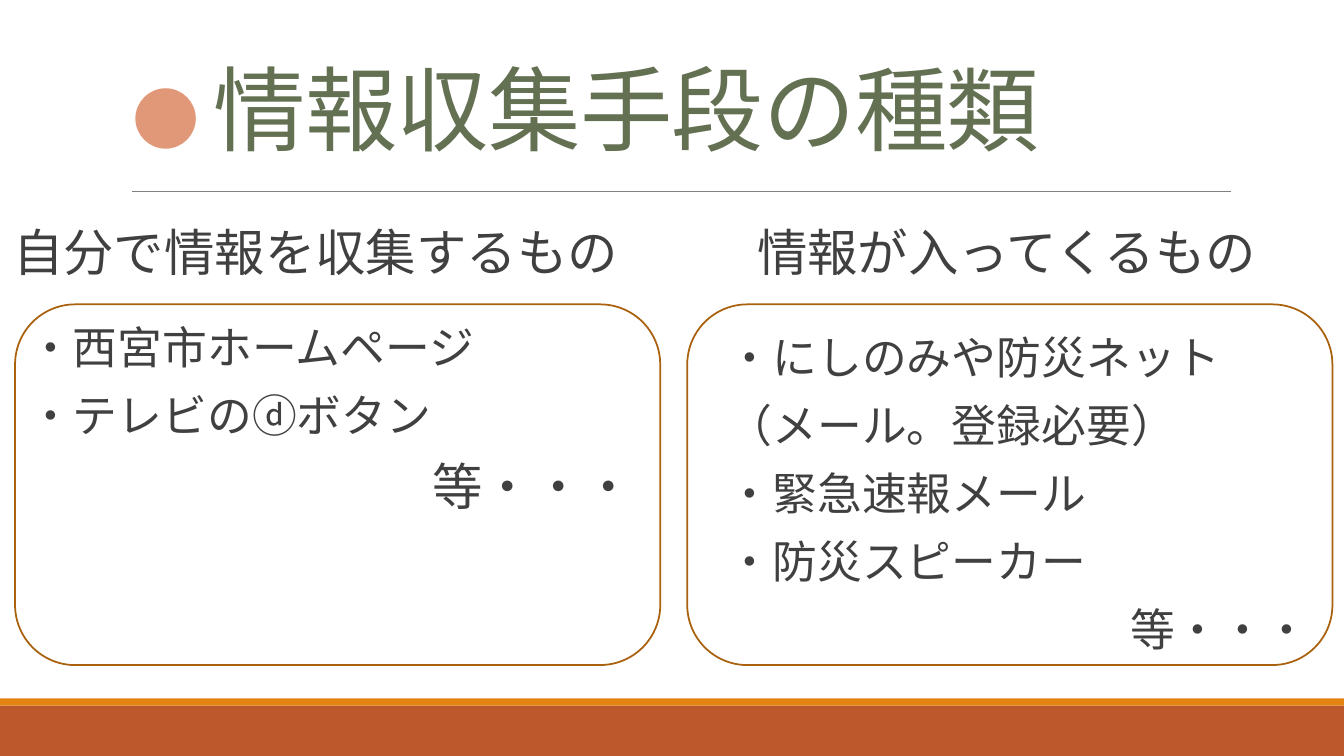
from lxml import etree
from pptx import Presentation
from pptx import util as u
from pptx.dml.color import RGBColor
from pptx.enum import shapes, text
from pptx.oxml.ns import qn

GOTHIC = "Noto Sans CJK JP"
LEFT, RIGHT = text.PP_ALIGN.LEFT, text.PP_ALIGN.RIGHT


def color(value):
    return RGBColor.from_string(value)


def add_text(page, place, lines, paragraph_format, anchor=text.MSO_ANCHOR.TOP):
    box = page.shapes.add_textbox(*map(u.Cm, place))
    frame = box.text_frame
    frame_format = {"word_wrap": True, "vertical_anchor": anchor,
                    "margin_left": u.Cm(0.33), "margin_right": 0}
    for name, value in frame_format.items():
        setattr(frame, name, value)
    for index, (alignment, spans) in enumerate(lines):
        para = frame.paragraphs[0] if index == 0 else frame.add_paragraph()
        for name, value in {**paragraph_format, "alignment": alignment}.items():
            setattr(para, name, value)
        for words, size, font, fill in spans:
            span = para.add_run()
            span.text = words
            for name, value in {"size": u.Pt(size), "name": font}.items():
                setattr(span.font, name, value)
            span.font.color.rgb = color(fill)
            east_asian = etree.SubElement(span.font._element, qn("a:ea"))
            east_asian.set("typeface", GOTHIC)
    return box


deck = Presentation()
deck.slide_width, deck.slide_height = u.Cm(33.87), u.Cm(19.05)
page = deck.slides.add_slide(deck.slide_layouts[6])

for top, height, fill in [(17.78, 1.27, "BD582C"), (17.6, 0.18, "E48312")]:
    band = page.shapes.add_shape(shapes.MSO_SHAPE.RECTANGLE, 0, u.Cm(top),
                                 deck.slide_width, u.Cm(height))
    band.shadow.inherit = False
    band.fill.solid()
    band.fill.fore_color.rgb = color(fill)
    band.line.fill.background()

rule = page.shapes.add_connector(shapes.MSO_CONNECTOR.STRAIGHT,
                                 u.Cm(3.33), u.Cm(4.83), u.Cm(31.01), u.Cm(4.83))
rule.line.color.rgb = color("808080")
rule.line.width = u.Pt(0.5)
etree.SubElement(rule._element.spPr, qn("a:effectLst"))

title = add_text(page, (3, 1.04, 27.94, 3.2),
                 [(LEFT, [("● ", 48, "Calibri", "E09878"),
                          ("情報収集手段の種類", 66, GOTHIC, "637052")])],
                 {"line_spacing": 0.85}, text.MSO_ANCHOR.BOTTOM)
for span in title.text_frame.paragraphs[0].runs:
    span.font._element.set("spc", "-50")

columns = [
    (0.38, (0, 5.61, 17.93, 2.06), "自分で情報を収集するもの", (0.38, 8.08, 15.6, 6.53),
     [("・西宮市ホームページ", 32, LEFT), ("・テレビのⓓボタン", 32, LEFT),
      ("等・・・", 36, RIGHT)]),
    (17.32, (18.75, 5.61, 15.1, 2.06), "情報が入ってくるもの", (18.01, 8.33, 15, 8.74),
     [("・にしのみや防災ネット", 32, LEFT), ("（メール。登録必要）", 32, LEFT),
      ("・緊急速報メール", 32, LEFT), ("・防災スピーカー", 32, LEFT),
      ("等・・・", 32, RIGHT)]),
]
body_format = {"line_spacing": 0.9, "space_before": u.Pt(12), "space_after": u.Pt(2)}

for frame_left, heading_place, heading, list_place, items in columns:
    outline = page.shapes.add_shape(shapes.MSO_SHAPE.ROUNDED_RECTANGLE, u.Cm(frame_left),
                                    u.Cm(7.67), u.Cm(16.26), u.Cm(9.09))
    outline.shadow.inherit = False
    outline.fill.background()
    outline.line.color.rgb = color("A9610D")
    outline.line.width = u.Pt(1.25)
    add_text(page, heading_place,
             [(LEFT, [(heading, 36, GOTHIC, "404040")])], body_format)
    add_text(page, list_place,
             [(alignment, [(words, size, GOTHIC, "404040")])
              for words, size, alignment in items], body_format)

deck.save("out.pptx")
